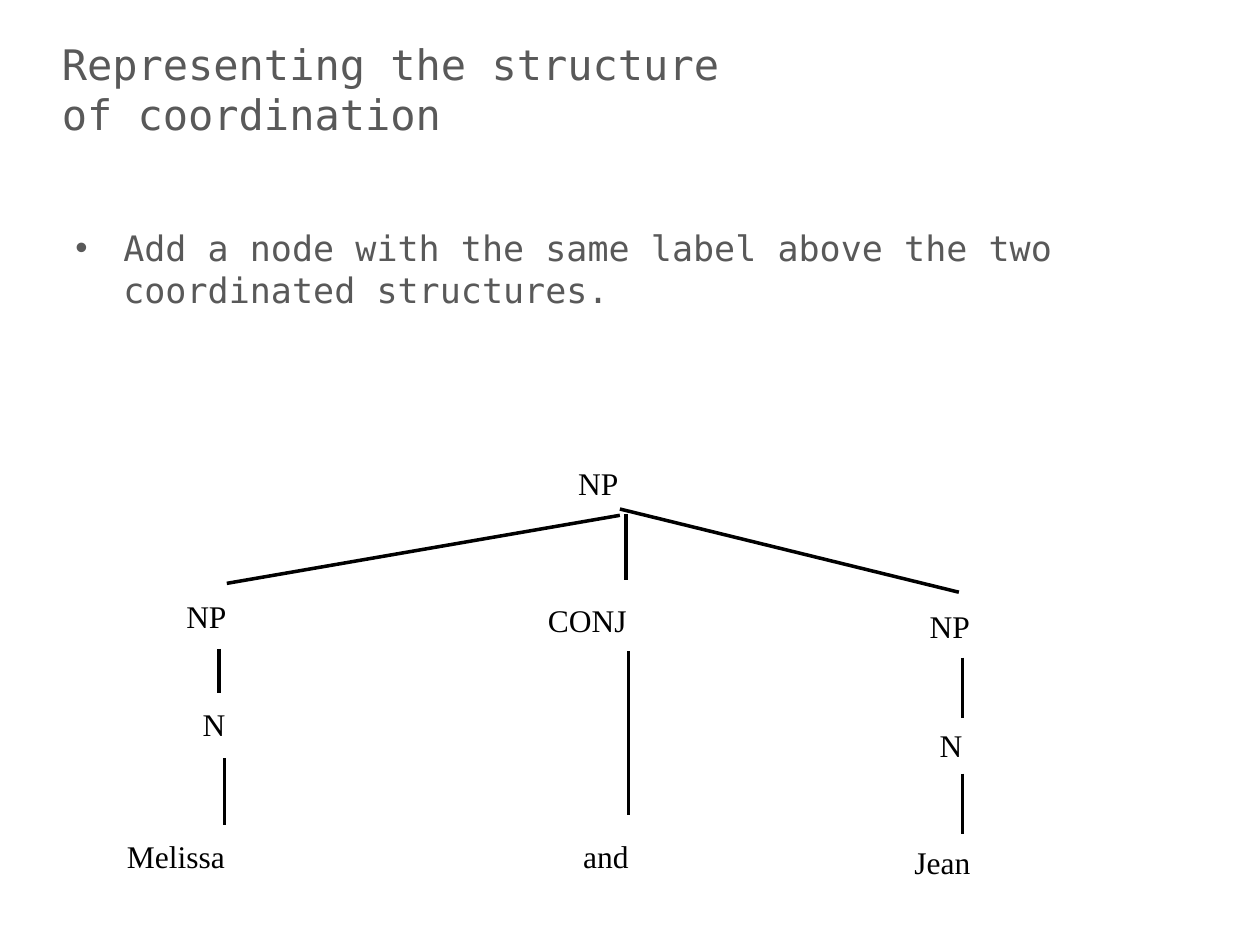
import pptx
import pptx.util
import pptx.dml.color
import pptx.enum.shapes
import pptx.enum.text
from lxml import etree
from pptx.oxml.ns import qn

Inches, Pt = pptx.util.Inches, pptx.util.Pt
COLORS = {"heading": "595959", "tree": "000000"}
MONO, SERIF = "DejaVu Sans Mono", "Times New Roman"


def write(frame, text, font_name, size, color):
    frame.text = text
    paragraph = frame.paragraphs[0]
    paragraph.alignment = pptx.enum.text.PP_ALIGN.LEFT
    font = paragraph.runs[0].font
    for attribute, value in {"name": font_name, "size": Pt(size)}.items():
        setattr(font, attribute, value)
    font.color.rgb = pptx.dml.color.RGBColor.from_string(COLORS[color])
    return paragraph


presentation = pptx.Presentation()
presentation.slide_width, presentation.slide_height = Inches(10), Inches(7.5)
slide = presentation.slides.add_slide(presentation.slide_layouts[5])

title = slide.shapes.title
title_place = {"left": 0.39, "top": 0.19, "width": 5.57, "height": 1.03}
for attribute, value in title_place.items():
    setattr(title, attribute, Inches(value))
title.text_frame.vertical_anchor = pptx.enum.text.MSO_ANCHOR.MIDDLE
write(title.text_frame, "Representing the structure of coordination", MONO, 24, "heading")

instruction = slide.shapes.add_textbox(Inches(0.5), Inches(1.75), Inches(8.68), Inches(4.95))
instruction.text_frame.word_wrap = True
bullet_line = write(
    instruction.text_frame,
    "Add a node with the same label above the two coordinated structures.",
    MONO, 20, "heading",
)
properties = bullet_line._p.get_or_add_pPr()
properties.set("marL", str(Inches(0.38)))
properties.set("indent", str(Inches(-0.38)))
etree.SubElement(properties, qn("a:buFont")).set("typeface", "Arial")
etree.SubElement(properties, qn("a:buChar")).set("char", "•")

# Label, left, top, width
nodes = [
    ("NP", 4.49, 3.63, 0.62),
    ("NP", 1.38, 4.69, 0.62),
    ("CONJ", 4.25, 4.72, 1.03),
    ("NP", 7.28, 4.77, 0.62),
    ("N", 1.51, 5.55, 0.44),
    ("N", 7.36, 5.71, 0.44),
    ("Melissa", 0.91, 6.59, 1.23),
    ("and", 4.53, 6.59, 0.68),
    ("Jean", 7.16, 6.64, 0.84),
]
for label, left, top, width in nodes:
    node = slide.shapes.add_textbox(Inches(left), Inches(top), Inches(width), Inches(0.5))
    node.text_frame.word_wrap = False
    node.text_frame.auto_size = pptx.enum.text.MSO_AUTO_SIZE.SHAPE_TO_FIT_TEXT
    write(node.text_frame, label, SERIF, 18, "tree")

# Start x, start y, end x, end y
branches = [
    (4.92, 4.09, 1.8, 4.63),
    (4.97, 4.08, 4.97, 4.6),
    (4.92, 4.04, 7.61, 4.7),
    (1.74, 5.15, 1.74, 5.5),
    (1.78, 6.02, 1.78, 6.55),
    (4.99, 5.17, 4.99, 6.47),
    (7.64, 5.22, 7.64, 5.7),
    (7.64, 6.14, 7.64, 6.62),
]
for ends in branches:
    branch = slide.shapes.add_connector(
        pptx.enum.shapes.MSO_CONNECTOR.STRAIGHT, *map(Inches, ends)
    )
    branch.line.width = Pt(2)
    branch.line.color.rgb = pptx.dml.color.RGBColor.from_string(COLORS["tree"])
    etree.SubElement(branch._element.spPr, qn("a:effectLst"))

presentation.save("out.pptx")
